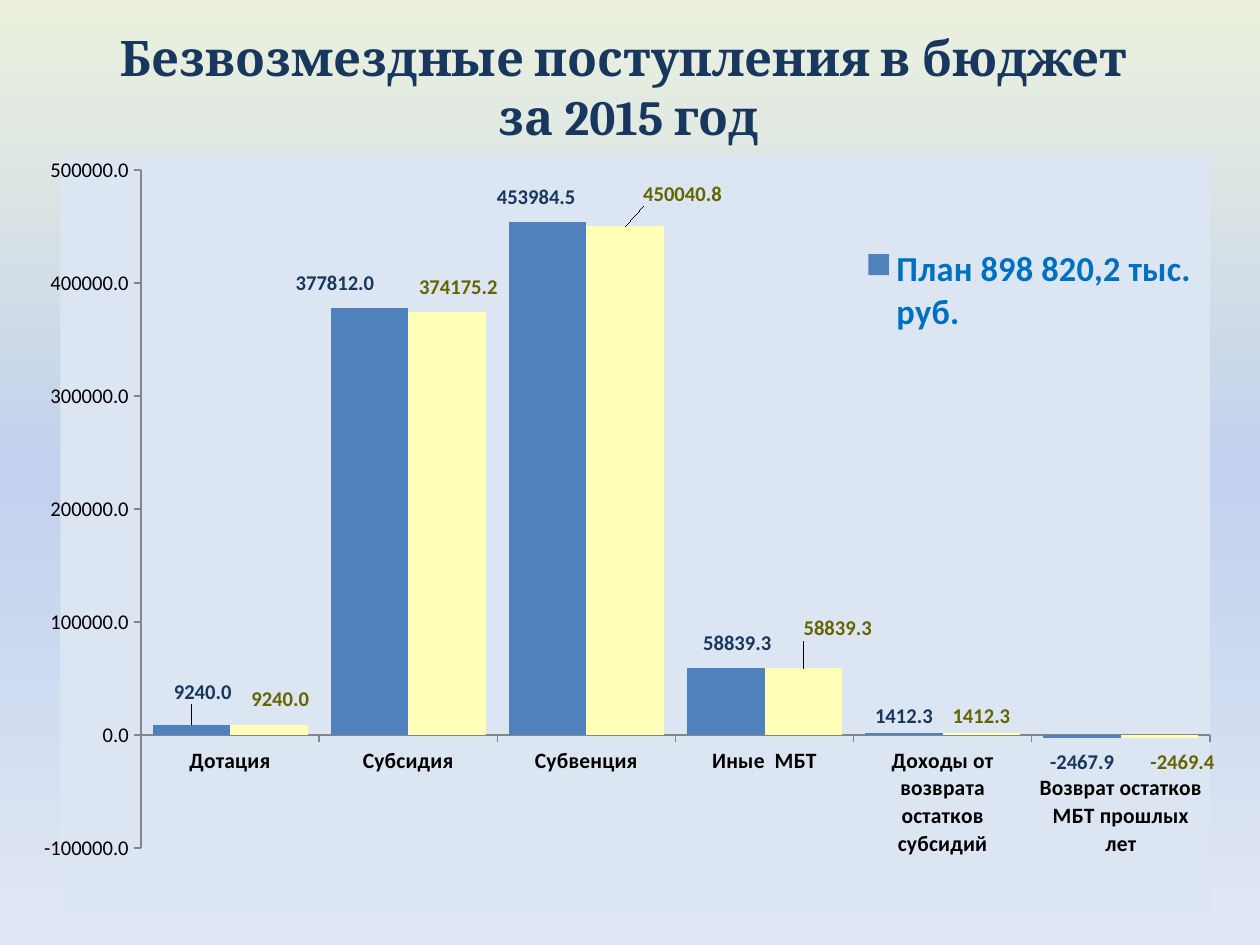
"""Builds a slide with a clustered column chart of budget receipts."""
from copy import deepcopy

from lxml import etree
from pptx import Presentation
from pptx.chart.data import CategoryChartData
from pptx.dml.color import RGBColor
from pptx.enum.chart import XL_CHART_TYPE, XL_LABEL_POSITION, XL_LEGEND_POSITION
from pptx.enum.text import MSO_ANCHOR, PP_ALIGN
from pptx.oxml import parse_xml
from pptx.oxml.ns import nsdecls, qn
from pptx.util import Inches, Pt

COLUMNS = XL_CHART_TYPE.COLUMN_CLUSTERED
OUTSIDE = XL_LABEL_POSITION.OUTSIDE_END
RIGHT = XL_LEGEND_POSITION.RIGHT
CENTER = PP_ALIGN.CENTER
MIDDLE = MSO_ANCHOR.MIDDLE

COLORS = {
    "sky_top": "EBF1DE", "sky_mid": "C2D1ED", "sky_low": "E1E8F5",
    "navy": "17375E", "black": "000000", "panel": "DCE6F2", "axis": "868686",
    "legend": "0070C0", "plan": "4F81BD", "fact": "FFFFB7", "olive": "666400",
}
TITLE = ("Безвозмездные поступления в бюджет", " за 2015 год")
CATEGORIES = (
    "Дотация", "Субсидия", "Субвенция", "Иные  МБТ",
    "Доходы от возврата остатков субсидий",
    "                                  Возврат остатков МБТ прошлых лет",
)
SERIES = (
    ("План 898 820,2 тыс. руб.", "plan", "navy",
     (9240, 377812, 453984.5, 58839.3, 1412.3, -2467.9),
     {0: (0.01, -0.02), 1: (-0.03, -0.01), 2: (-0.01, -0.01),
      3: (0.01, -0.01), 5: (0, 0.01)}),
    ("", "fact", "olive",
     (9240, 374175.2, 450040.8, 58839.3, 1412.3, -2469.4),
     {0: (0.01, -0.01), 1: (0.01, -0.01), 2: (0.05, -0.02),
      3: (0.03, -0.03), 5: (0.02, 0.01)}),
)


def rgb(name):
    """Return a named colour."""
    return RGBColor.from_string(COLORS[name])


def style_font(font, size, color, bold=False, name="Calibri"):
    """Set typeface, size, colour and weight."""
    font.name, font.size, font.bold = name, Pt(size), bold
    font.color.rgb = rgb(color)


def paint_background(s):
    """Fill the slide with a vertical three-stop gradient."""
    fill = s.background.fill
    fill.gradient()
    fill.gradient_angle = 270
    stops = s._element.find(".//" + qn("a:gsLst"))
    stops.insert(1, deepcopy(stops[0]))
    names = ("sky_top", "sky_mid", "sky_low")
    for i, (stop, name) in enumerate(zip(fill.gradient_stops, names)):
        stop.color.rgb = rgb(name)
        stop.position = i / 2


def add_title(s):
    """Place and format the title placeholder."""
    sp = s.shapes.title
    sp.left, sp.top, sp.width, sp.height = map(Inches, (0.59, 0.21, 8.72, 0.95))
    tf = sp.text_frame
    tf.vertical_anchor = MIDDLE
    p = tf.paragraphs[0]
    p.alignment = CENTER
    p.add_run().text = TITLE[0]
    p.add_line_break()
    p.add_run().text = TITLE[1]
    style_font(p.font, 28, "navy", True, "Cambria")


def set_layout(parent, index, x, y, size=None, inner=False):
    """Give a chart part a manual layout in shares of the chart."""
    for old in parent.findall(qn("c:layout")):
        parent.remove(old)
    settings = [("layoutTarget", "inner")] if inner else []
    if size:
        settings += [("xMode", "edge"), ("yMode", "edge")]
    settings += [("x", x), ("y", y)]
    if size:
        settings += zip("wh", size)
    layout = etree.Element(qn("c:layout"))
    manual = etree.SubElement(layout, qn("c:manualLayout"))
    for tag, value in settings:
        etree.SubElement(manual, qn("c:" + tag)).set("val", str(value))
    parent.insert(index, layout)


def format_axes(chart):
    """Format both axes and the value gridlines."""
    cat, val = chart.category_axis, chart.value_axis
    style_font(cat.tick_labels.font, 12.5, "black", True)
    style_font(val.tick_labels.font, 12, "black")
    for axis in (cat, val):
        line = axis.format.line
        line.color.rgb, line.width = rgb("axis"), Pt(0.75)
    val.minimum_scale, val.maximum_scale, val.major_unit = -100000, 500000, 100000
    val.tick_labels.number_format = "0.0"
    val.tick_labels.number_format_is_linked = False
    line = val.major_gridlines.format.line
    line.color.rgb, line.width = rgb("panel"), Pt(0.75)


def hide_leader_lines(labels):
    """Switch off the lines between shifted labels and their columns."""
    labels._element.append(parse_xml(
        f'<c:extLst {nsdecls("c")}>'
        '<c:ext uri="{CE6537A1-D6FC-4f65-9D91-7224C49458BB}" '
        'xmlns:c15="http://schemas.microsoft.com/office/drawing/2012/chart">'
        '<c15:showLeaderLines val="0"/></c:ext></c:extLst>'))


def format_series(series, color, label_color, shifts):
    """Colour a series and shift its value labels."""
    series.invert_if_negative = False
    series.format.fill.solid()
    series.format.fill.fore_color.rgb = rgb(color)
    labels = series.data_labels
    labels.show_value = True
    labels.number_format, labels.number_format_is_linked = "0.0", False
    labels.position = OUTSIDE
    style_font(labels.font, 12, label_color, True)
    for i in shifts:
        label = series.points[i].data_label
        style_font(label.font, 12, label_color, True)
        label.position = OUTSIDE
    for dlbl in labels._element.findall(qn("c:dLbl")):
        set_layout(dlbl, 1, *shifts[int(dlbl.find(qn("c:idx")).get("val"))])
    hide_leader_lines(labels)


def format_legend(chart):
    """Place the legend and show only the plan entry."""
    chart.has_legend = True
    legend = chart.legend
    legend.position = RIGHT
    legend.include_in_layout = False
    style_font(legend.font, 20, "legend", True)
    set_layout(legend._element, 1, 0.7, 0.12, (0.29, 0.12))
    legend._element.insert(1, parse_xml(
        f'<c:legendEntry {nsdecls("c")}><c:idx val="1"/>'
        '<c:delete val="1"/></c:legendEntry>'))


def fill_chart_area(chart):
    """Give the chart area a plain fill and no border."""
    chart._chartSpace.find(qn("c:chart")).addnext(parse_xml(
        f'<c:spPr {nsdecls("c", "a")}><a:solidFill><a:srgbClr val="{COLORS["panel"]}"/>'
        '</a:solidFill><a:ln><a:noFill/></a:ln></c:spPr>'))


def add_column_chart(s):
    """Add the chart of planned and actual receipts."""
    data = CategoryChartData(number_format="0.0")
    data.categories = CATEGORIES
    for name, _, _, values, _ in SERIES:
        data.add_series(name, values)
    frame = map(Inches, (0.35, 1.23, 9.29, 5.98))
    chart = s.shapes.add_chart(COLUMNS, *frame, data).chart
    chart.has_title = False
    style_font(chart.font, 18, "black")
    plot = chart.plots[0]
    plot.gap_width, plot.overlap, plot.vary_by_categories = 30, 0, False
    format_axes(chart)
    for series, (_, color, label_color, _, shifts) in zip(plot.series, SERIES):
        format_series(series, color, label_color, shifts)
    format_legend(chart)
    fill_chart_area(chart)
    area = chart._chartSpace.find(".//" + qn("c:plotArea"))
    set_layout(area, 0, 0.09, 0.02, (0.93, 0.9), inner=True)


def main():
    """Build and save the slide."""
    prs = Presentation()
    prs.slide_width, prs.slide_height = Inches(10), Inches(7.5)
    s = prs.slides.add_slide(prs.slide_layouts[5])
    paint_background(s)
    add_title(s)
    add_column_chart(s)
    prs.save("out.pptx")


if __name__ == "__main__":
    main()
